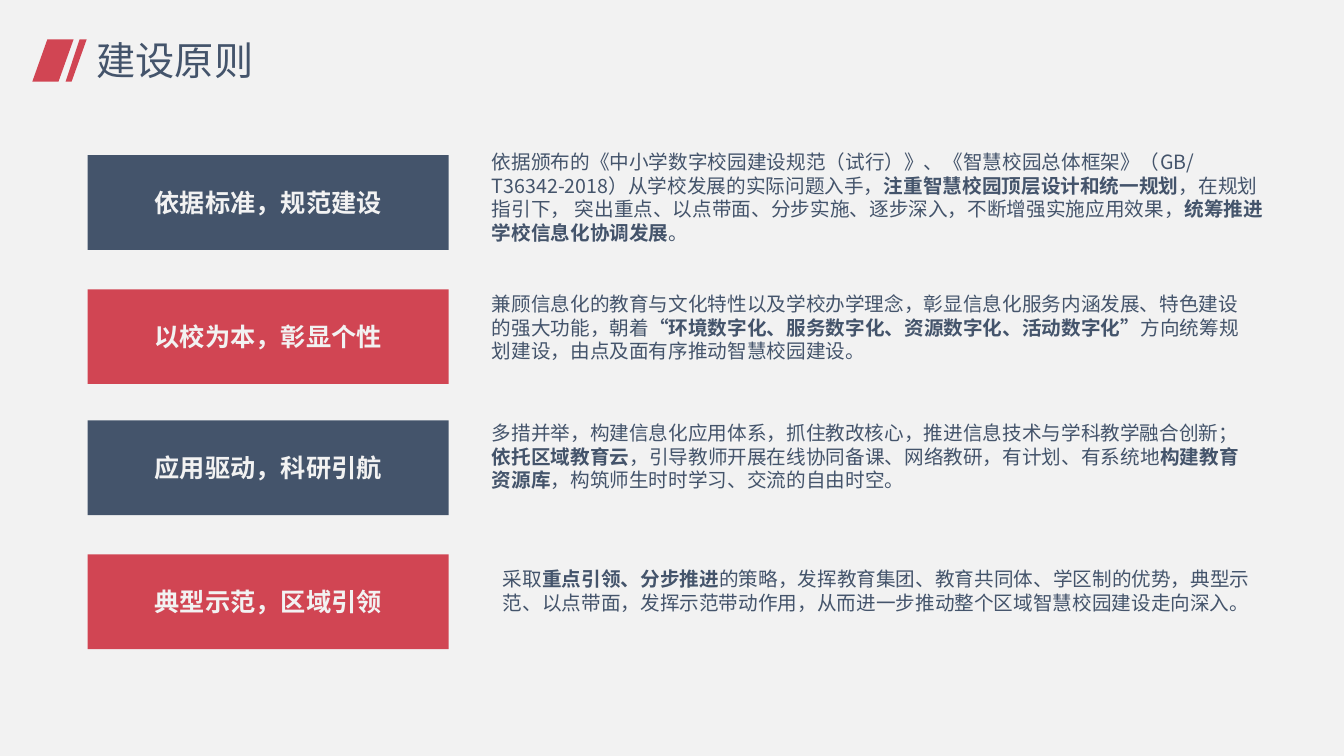
from lxml import etree
from pptx import Presentation
from pptx import util as u
from pptx.dml.color import RGBColor
from pptx.enum import shapes, text
from pptx.oxml import ns

COLORS = {"navy": "44546B", "red": "D14553", "paper": "F2F2F2"}
HEADING_FONT = "Arial"
BODY_FONT = "Noto Sans CJK SC"

PRINCIPLES = [
    ("依据标准，规范建设", 1.54, (4.78, 1.44, 7.88, 1.04), [
        ("依据颁布的《中小学数字校园建设规范（试行）》、《智慧校园总体框架》"
         "（GB/T36342-2018）从学校发展的实际问题入手，", False),
        ("注重智慧校园顶层设计和统一规划", True),
        ("，在规划指引下， 突出重点、以点带面、分步实施、逐步深入，"
         "不断增强实施应用效果，", False),
        ("统筹推进学校信息化协调发展", True),
        ("。", False),
    ]),
    ("以校为本，彰显个性", 2.87, (4.78, 2.85, 7.77, 0.81), [
        ("兼顾信息化的教育与文化特性以及学校办学理念，"
         "彰显信息化服务内涵发展、特色建设的强大功能，朝着", False),
        ("“环境数字化、服务数字化、资源数字化、活动数字化”", True),
        ("方向统筹规划建设，由点及面有序推动智慧校园建设。", False),
    ]),
    ("应用驱动，科研引航", 4.17, (4.78, 4.13, 7.77, 0.81), [
        ("多措并举，构建信息化应用体系，抓住教改核心，"
         "推进信息技术与学科教学融合创新；", False),
        ("依托区域教育云", True),
        ("，引导教师开展在线协同备课、网络教研，有计划、有系统地", False),
        ("构建教育资源库", True),
        ("，构筑师生时时学习、交流的自由时空。", False),
    ]),
    ("典型示范，区域引领", 5.5, (4.89, 5.58, 7.66, 0.57), [
        ("采取", False),
        ("重点引领、分步推进", True),
        ("的策略，发挥教育集团、教育共同体、学区制的优势，"
         "典型示范、以点带面，发挥示范带动作用，"
         "从而进一步推动整个区域智慧校园建设走向深入。", False),
    ]),
]


def color(name):
    return RGBColor.from_string(COLORS[name])


def paint(shape, fill):
    shape.shadow.inherit = False
    shape.fill.solid()
    shape.fill.fore_color.rgb = color(fill)
    shape.line.fill.background()


def write(shape, runs, *, size, font, ink, align=text.PP_ALIGN.LEFT,
          anchor=text.MSO_ANCHOR.TOP, wrap=True, spacing=None):
    frame = shape.text_frame
    frame.word_wrap = wrap
    frame.vertical_anchor = anchor
    paragraph = frame.paragraphs[0]
    paragraph.alignment = align
    if spacing:
        paragraph.line_spacing = u.Pt(spacing)
    for wording, bold in runs:
        run = paragraph.add_run()
        run.text = wording
        run.font.size = u.Pt(size)
        run.font.name = font
        run.font.bold = bold
        run.font.color.rgb = color(ink)
        run.font.language_id = None
        properties = run.font._element
        properties.set("lang", "zh-CN")
        east_asian = etree.SubElement(properties, ns.qn("a:ea"))
        east_asian.set("typeface", font)


def add_text(slide, box, runs, **style):
    shape = slide.shapes.add_textbox(*map(u.Inches, box))
    write(shape, runs, **style)


def add_label(slide, top, wording, fill):
    shape = slide.shapes.add_shape(
        shapes.MSO_SHAPE.RECTANGLE,
        u.Inches(0.87), u.Inches(top), u.Inches(3.58), u.Inches(0.94))
    paint(shape, fill)
    write(shape, [(wording, True)], size=18, font=HEADING_FONT, ink="paper",
          align=text.PP_ALIGN.CENTER, anchor=text.MSO_ANCHOR.MIDDLE)


def add_slash(slide, points):
    corners = [(u.Inches(x), u.Inches(y)) for x, y in points]
    builder = slide.shapes.build_freeform(*corners[0])
    builder.add_line_segments(corners[1:], close=True)
    paint(builder.convert_to_shape(), "red")


def main():
    presentation = Presentation()
    presentation.slide_width = u.Inches(13.33)
    presentation.slide_height = u.Inches(7.5)
    slide = presentation.slides.add_slide(presentation.slide_layouts[6])
    slide.background.fill.solid()
    slide.background.fill.fore_color.rgb = color("paper")

    add_slash(slide, [(0.47, 0.39), (0.73, 0.39), (0.58, 0.81), (0.32, 0.81)])
    add_slash(slide, [(0.79, 0.39), (0.86, 0.39), (0.71, 0.81), (0.65, 0.81)])
    add_text(slide, (0.86, 0.31, 1.77, 0.57), [("建设原则", False)], size=28,
             font=HEADING_FONT, ink="navy", anchor=text.MSO_ANCHOR.MIDDLE,
             wrap=False)

    for index, (label, top, box, runs) in enumerate(PRINCIPLES):
        add_label(slide, top, label, ("navy", "red")[index % 2])
        add_text(slide, box, runs, size=14, font=BODY_FONT, ink="navy",
                 spacing=16.8)

    presentation.save("out.pptx")


if __name__ == "__main__":
    main()
